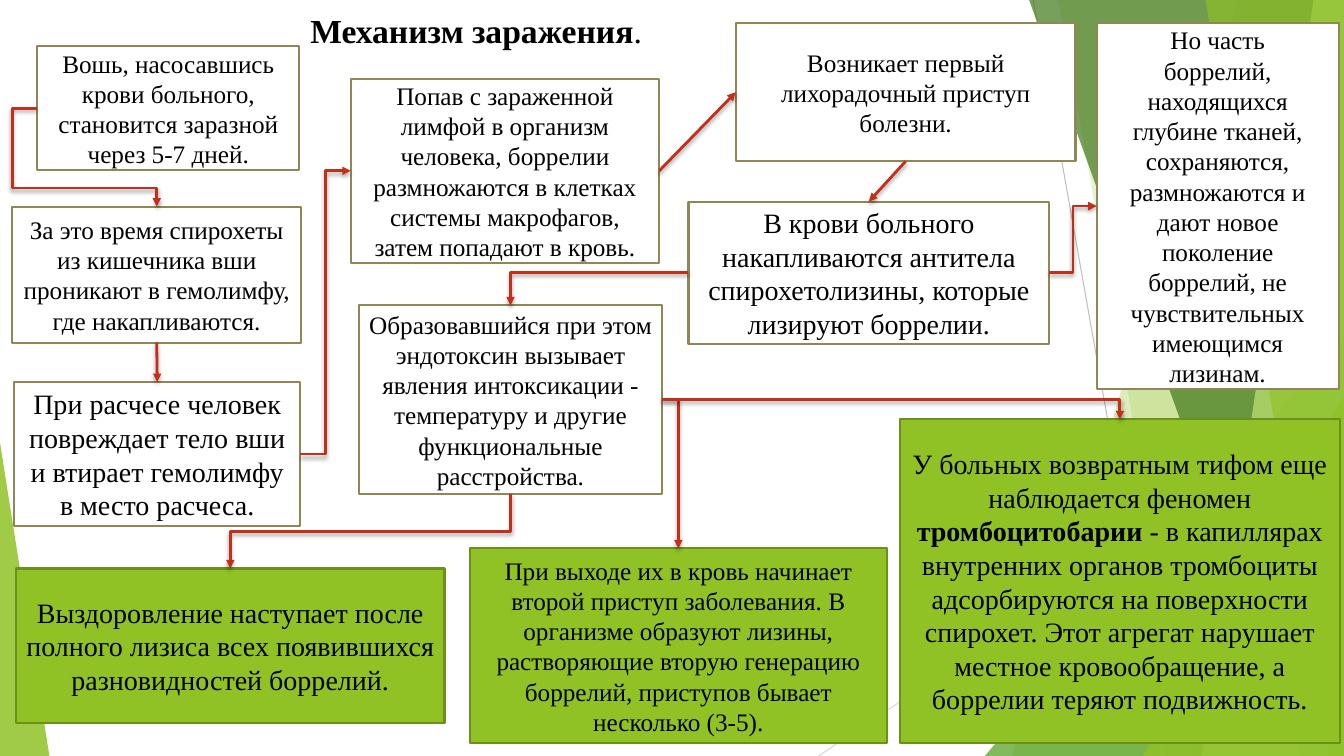
from lxml import etree
from pptx import Presentation
from pptx.dml.color import RGBColor
from pptx.enum.shapes import MSO_CONNECTOR, MSO_SHAPE
from pptx.enum.text import MSO_ANCHOR, PP_ALIGN
from pptx.oxml import parse_xml
from pptx.oxml.ns import nsdecls, qn
from pptx.util import Inches, Pt

PROCESS, TRIANGLE = MSO_SHAPE.FLOWCHART_PROCESS, MSO_SHAPE.ISOSCELES_TRIANGLE
STRAIGHT, ELBOW = MSO_CONNECTOR.STRAIGHT, MSO_CONNECTOR.ELBOW
CENTER, LEFT = PP_ALIGN.CENTER, PP_ALIGN.LEFT
MIDDLE, TOP = MSO_ANCHOR.MIDDLE, MSO_ANCHOR.TOP

COLUMNS, ROWS = 133.33, 75
SIDES = {"left": (0, 0.5), "right": (1, 0.5), "top": (0.5, 0), "bottom": (0.5, 1)}


def grid(cells):
    return Inches(cells / 10)


def color(value):
    return RGBColor.from_string(value)


def write(frame, text, size=18, align=CENTER, anchor=MIDDLE, spacing=1.0, inset=1):
    frame.word_wrap = True
    frame.vertical_anchor = anchor
    frame.margin_left = frame.margin_right = grid(inset)
    paragraph = frame.paragraphs[0]
    paragraph.alignment = align
    paragraph.line_spacing = spacing
    for index, piece in enumerate(text.split("*")):
        if piece:
            run = paragraph.add_run()
            run.text = piece
            run.font.name = "Times New Roman"
            run.font.size = Pt(size)
            run.font.bold = index % 2 == 1
            run.font.color.rgb = color("000000")


def anchor_point(box, side):
    across, down = SIDES[side]
    return box.left + box.width * across, box.top + box.height * down


class Scheme:
    plain = ("FFFFFF", "918655")
    outcome = ("90C226", "6B901C")
    arrow_color = "C42F1A"

    def __init__(self, slide):
        self.shapes = slide.shapes

    def tint(self, shape, fill, opacity):
        shape.shadow.inherit = False
        shape.line.fill.background()
        shape.fill.solid()
        shape.fill.fore_color.rgb = color(fill)
        rgb = shape.fill._xPr.find(".//" + qn("a:srgbClr"))
        etree.SubElement(rgb, qn("a:alpha"), val=str(opacity * 1000))

    def band(self, top_column, bottom_column, fill, opacity):
        builder = self.shapes.build_freeform(grid(top_column), 0, scale=1.0)
        corners = [(COLUMNS, 0), (COLUMNS, ROWS), (bottom_column, ROWS)]
        builder.add_line_segments([(grid(x), grid(y)) for x, y in corners], close=True)
        self.tint(builder.convert_to_shape(), fill, opacity)

    def wedge(self, left, top, width, apex, fill, opacity):
        wedge = self.shapes.add_shape(
            TRIANGLE, grid(left), grid(top), grid(width), grid(ROWS - top))
        wedge.adjustments[0] = apex
        self.tint(wedge, fill, opacity)

    def ray(self, start, end, stroke):
        ray = self.shapes.add_connector(STRAIGHT, *map(grid, start + end))
        ray.line.color.rgb = color(stroke)
        ray.line.width = Pt(0.75)
        ray._element.spPr.append(parse_xml(f"<a:effectLst {nsdecls('a')}/>"))

    def title(self, place, text):
        box = self.shapes.add_textbox(*map(grid, place))
        write(box.text_frame, text, size=24, align=LEFT, anchor=TOP, spacing=1.05)

    def step(self, place, text, look=plain, **text_format):
        box = self.shapes.add_shape(PROCESS, *map(grid, place))
        box.shadow.inherit = False
        box.fill.solid()
        box.fill.fore_color.rgb = color(look[0])
        box.line.color.rgb = color(look[1])
        box.line.width = Pt(1.5)
        write(box.text_frame, text, **text_format)
        return box

    def arrow(self, origin, exit_side, target, entry_side, route="bentConnector3", bends=()):
        x1, y1 = anchor_point(origin, exit_side)
        x2, y2 = anchor_point(target, entry_side)
        turned = route == "bentConnector3" and exit_side == "bottom"
        if turned:
            middle_x, middle_y = (x1 + x2) / 2, (y1 + y2) / 2
            half_x, half_y = (x2 - x1) / 2, (y2 - y1) / 2
            x1, y1 = middle_x - half_y, middle_y + half_x
            x2, y2 = middle_x + half_y, middle_y - half_x
        kind = STRAIGHT if route == "line" else ELBOW
        arrow = self.shapes.add_connector(kind, int(x1), int(y1), int(x2), int(y2))
        arrow.line.color.rgb = color(self.arrow_color)
        arrow.line.width = Pt(2)
        properties = arrow._element.spPr
        if turned:
            properties.find(qn("a:xfrm")).set("rot", "5400000")
        geometry = properties.find(qn("a:prstGeom"))
        geometry.set("prst", route)
        for number, bend in enumerate(bends, 1):
            etree.SubElement(geometry.find(qn("a:avLst")), qn("a:gd"),
                             name=f"adj{number}", fmla=f"val {round(bend * 100000)}")
        etree.SubElement(properties.find(qn("a:ln")), qn("a:tailEnd"), type="triangle")
        properties.append(parse_xml(
            f"<a:effectLst {nsdecls('a')}>"
            '<a:outerShdw blurRad="38100" dist="25400" dir="5400000" rotWithShape="0">'
            '<a:srgbClr val="000000"><a:alpha val="35000"/></a:srgbClr>'
            "</a:outerShdw></a:effectLst>"))


def main():
    presentation = Presentation()
    presentation.slide_width, presentation.slide_height = grid(COLUMNS), grid(ROWS)
    scheme = Scheme(presentation.slides.add_slide(presentation.slide_layouts[6]))

    scheme.ray((102.5, 0), (115.8, ROWS), "BFBFBF")
    scheme.ray((COLUMNS, 40.3), (81.2, ROWS), "D9D9D9")
    scheme.band(122.8, 100.4, "90C226", 30)
    scheme.band(105, 118.3, "90C226", 20)
    scheme.wedge(97.7, 33.3, 35.6, 1, "54A021", 72)
    scheme.band(102.1, 129.1, "3F7819", 70)
    scheme.band(130.3, 119.2, "C0E474", 70)
    scheme.band(119.6, 131.8, "90C226", 65)
    scheme.wedge(113.4, 39.3, 19.9, 1, "90C226", 80)
    scheme.wedge(0, 43.9, 4.9, 0, "90C226", 85)

    scheme.title((29.8, 0.3, 36.1, 5.3), "*Механизм заражения*.")
    louse = scheme.step(
        (3.7, 4.6, 26, 12.3),
        "Вошь, насосавшись крови больного, становится заразной через 5-7 дней.")
    hemolymph = scheme.step(
        (1.2, 20.5, 28.7, 13.5),
        "За это время спирохеты из кишечника вши проникают в гемолимфу, где накапливаются.")
    scratching = scheme.step(
        (1.4, 37.9, 28.4, 14.3),
        "При расчесе человек повреждает тело вши и втирает гемолимфу в место расчеса.",
        size=20)
    multiplication = scheme.step(
        (34.8, 7.8, 30.6, 18.3),
        "Попав с зараженной лимфой в организм человека, боррелии размножаются "
        "в клетках системы макрофагов, затем попадают в кровь.")
    fever = scheme.step(
        (73, 2.3, 33.7, 13.7), "Возникает первый лихорадочный приступ болезни.")
    antibodies = scheme.step(
        (68.3, 20, 35.8, 14.1),
        "В крови больного накапливаются антитела спирохетолизины, "
        "которые лизируют боррелии.", size=20)
    endotoxin = scheme.step(
        (35.6, 30.3, 30.1, 18.7),
        "Образовавшийся при этом эндотоксин вызывает явления интоксикации - "
        "температуру и другие функциональные расстройства.")
    survivors = scheme.step(
        (108.8, 2.3, 24, 36.3),
        "Но часть боррелий, находящихся глубине тканей, сохраняются, размножаются "
        "и дают новое поколение боррелий, не чувствительных имеющимся лизинам.",
        inset=2.4)
    second_attack = scheme.step(
        (46.6, 54.4, 41.4, 19.3),
        "При выходе их в кровь начинает второй приступ заболевания. В организме "
        "образуют лизины, растворяющие вторую генерацию боррелий, приступов "
        "бывает несколько (3-5).", scheme.outcome)
    recovery = scheme.step(
        (1.6, 56.4, 42.5, 15.3),
        "Выздоровление наступает после полного лизиса всех появившихся "
        "разновидностей боррелий.", scheme.outcome, size=20)
    platelets = scheme.step(
        (89.3, 41.6, 43.6, 32.1),
        "У больных возвратным тифом еще наблюдается феномен *тромбоцитобарии* - "
        "в капиллярах внутренних органов тромбоциты адсорбируются на поверхности "
        "спирохет. Этот агрегат нарушает местное кровообращение, а боррелии "
        "теряют подвижность.", scheme.outcome, size=20)

    scheme.arrow(louse, "left", hemolymph, "top", "bentConnector4", (-0.21, 0.81))
    scheme.arrow(hemolymph, "bottom", scratching, "top", "line")
    scheme.arrow(scratching, "right", multiplication, "left")
    scheme.arrow(multiplication, "right", fever, "left", "line")
    scheme.arrow(fever, "bottom", antibodies, "top", "line")
    scheme.arrow(antibodies, "left", endotoxin, "top", "bentConnector2")
    scheme.arrow(antibodies, "right", survivors, "left")
    scheme.arrow(endotoxin, "bottom", recovery, "top")
    scheme.arrow(endotoxin, "right", second_attack, "top", "bentConnector2")
    scheme.arrow(endotoxin, "right", platelets, "top", "bentConnector2")

    presentation.save("out.pptx")


if __name__ == "__main__":
    main()
